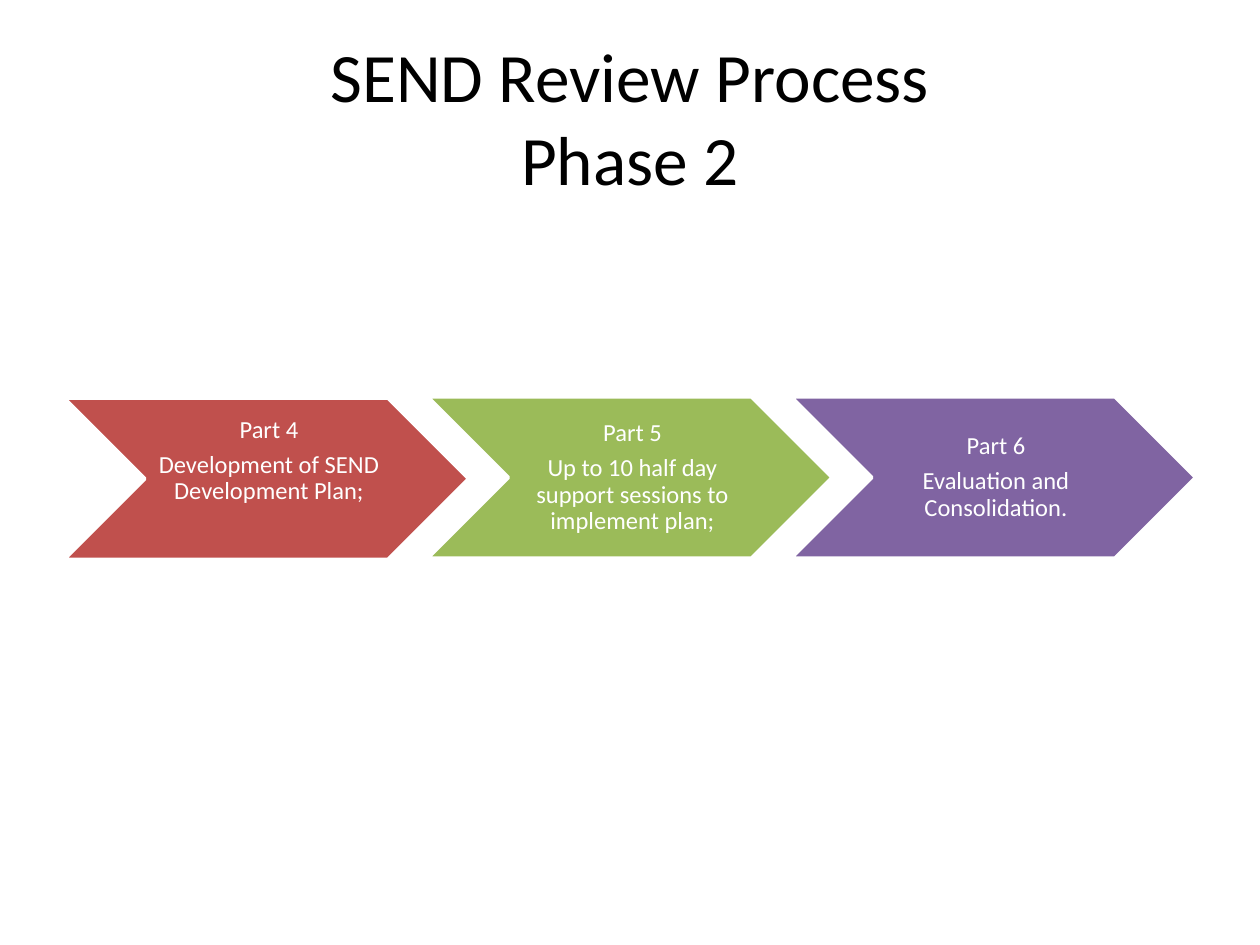
from pptx import Presentation
from pptx.dml.color import RGBColor
from pptx.enum import shapes, text
from pptx.util import Inches, Pt

PARTS = [
    ("C0504D", 3.16, 0.3, "Part 4", "Development of SEND Development Plan;"),
    ("9BBB59", 3.15, 0.02, "Part 5", "Up to 10 half day support sessions to implement plan;"),
    ("8064A2", 3.15, 0.02, "Part 6", "Evaluation and Consolidation."),
]
LEFT, STEP, WIDTH, HEIGHT = 0.51, 2.885, 3.21, 1.28


def rgb(value):
    return RGBColor.from_string(value)


def style(p, size, color):
    p.alignment = text.PP_ALIGN.CENTER
    p.font.name = "Calibri"
    p.font.size = Pt(size)
    p.font.color.rgb = rgb(color)


def add_text_frame(slide, left, top, width, height):
    box = slide.shapes.add_textbox(Inches(left), Inches(top), Inches(width), Inches(height))
    tf = box.text_frame
    tf.word_wrap = True
    tf.vertical_anchor = text.MSO_ANCHOR.MIDDLE
    return tf


def add_title(slide, left, top, width, height):
    tf = add_text_frame(slide, left, top, width, height)
    p = tf.paragraphs[0]
    p.text = "SEND Review Process\vPhase 2"
    style(p, 39.6, "000000")


def add_part(slide, left, top, width, height, color, bottom, lines):
    sp = slide.shapes.add_shape(
        shapes.MSO_SHAPE.CHEVRON, Inches(left), Inches(top), Inches(width), Inches(height)
    )
    sp.shadow.inherit = False
    sp.fill.solid()
    sp.fill.fore_color.rgb = rgb(color)
    sp.line.color.rgb = rgb("FFFFFF")
    sp.line.width = Pt(2)

    inset = height / 2
    tf = add_text_frame(slide, left + inset, top, width - 2 * inset, height)
    tf.margin_left = Inches(0.06)
    tf.margin_top = tf.margin_right = Inches(0.02)
    tf.margin_bottom = Inches(bottom)
    tf.text = "\n".join(lines)
    for p in tf.paragraphs:
        style(p, 14, "FFFFFF")
        p.line_spacing = 0.9
        p.space_after = Pt(4.9)


def main():
    prs = Presentation()
    prs.slide_width, prs.slide_height = Inches(10), Inches(7.5)
    slide = prs.slides.add_slide(prs.slide_layouts[6])
    add_title(slide, 0.5, 0.3, 9, 1.25)
    for i, (color, top, bottom, *lines) in enumerate(PARTS):
        add_part(slide, LEFT + i * STEP, top, WIDTH, HEIGHT, color, bottom, lines)
    prs.save("out.pptx")


if __name__ == "__main__":
    main()
